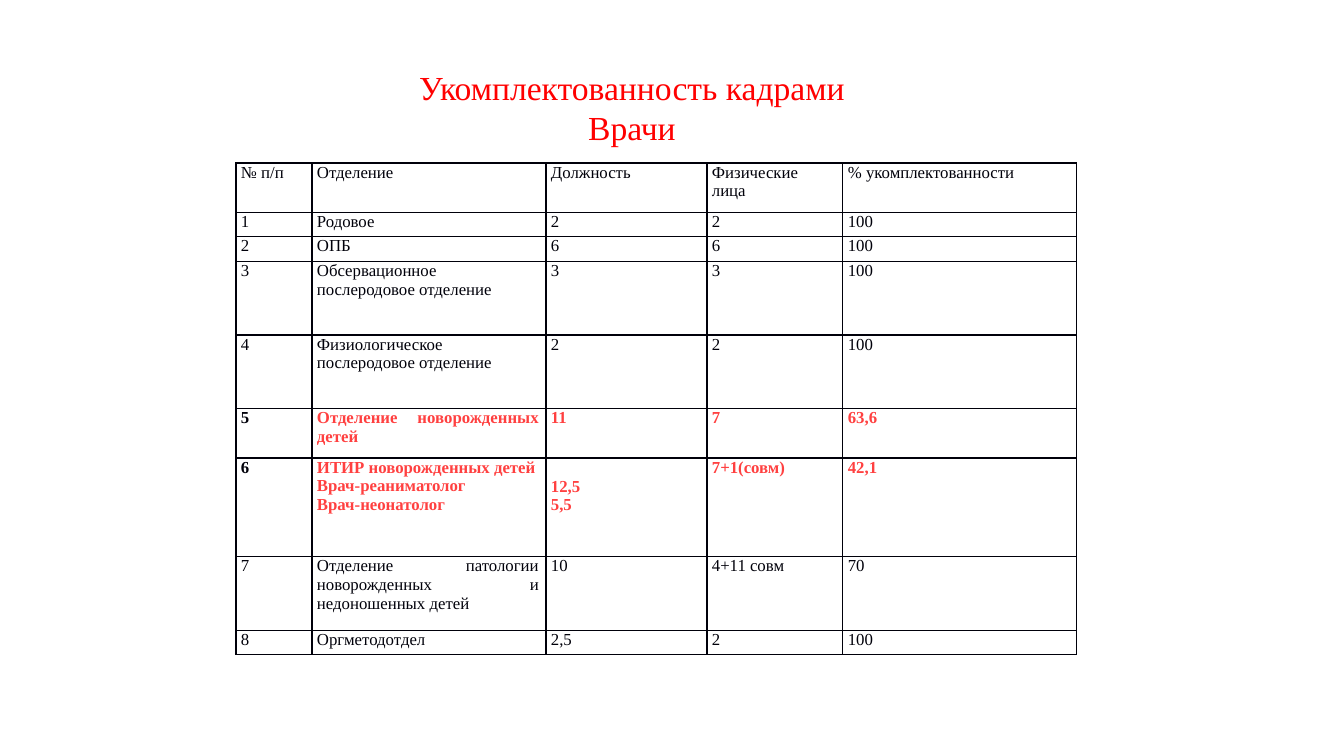
"""Build the staffing slide with a title and a table of departments."""
from lxml.etree import SubElement
from pptx import Presentation
from pptx.dml.color import RGBColor
from pptx.enum.text import MSO_ANCHOR, MSO_AUTO_SIZE, PP_ALIGN as Align
from pptx.oxml.ns import qn
from pptx.util import Pt

PX = 914400 / 100.8
FONT = "Times New Roman"
RED = RGBColor(0xFF, 0x00, 0x00)
CORAL = RGBColor(0xFF, 0x40, 0x40)
INK = RGBColor(0x00, 0x00, 0x0A)

TITLE = ["Укомплектованность кадрами", "Врачи"]
ROWS = [
    ["№ п/п", "Отделение", "Должность", "Физические лица", "% укомплектованности"],
    ["1", "Родовое", "2", "2", "100"],
    ["2", "ОПБ", "6", "6", "100"],
    ["3", "Обсервационное послеродовое отделение", "3", "3", "100"],
    ["4", "Физиологическое послеродовое отделение", "2", "2", "100"],
    ["5", "Отделение новорожденных детей", "11", "7", "63,6"],
    ["6", "ИТИР новорожденных детей\nВрач-реаниматолог\nВрач-неонатолог",
     "12,5\n5,5", "7+1(совм)", "42,1"],
    ["7", "Отделение патологии новорожденных и недоношенных детей",
     "10", "4+11 совм", "70"],
    ["8", "Оргметодотдел", "2,5", "2", "100"],
]
COL_WIDTHS = [76, 234, 161, 136, 234]
ROW_LINES = [2, 1, 1, 3, 3, 2, 4, 3, 1]
SHORT_STAFFED = (5, 6)
LEFT_ALIGNED = [(3, 1), (4, 1)]
SECOND_LINE_START = (6, 2)


def px(n):
    """Turn pixels into EMU."""
    return round(n * PX)


def write_lines(tf, lines, size, color, align, bold=False, spacing=None):
    """Fill a text frame with one formatted paragraph per line."""
    for i, line in enumerate(lines):
        p = tf.add_paragraph() if i else tf.paragraphs[0]
        p.alignment = align
        p.line_spacing = spacing
        r = p.add_run()
        r.text = line
        r.font.name, r.font.size, r.font.bold = FONT, Pt(size), bold
        r.font.color.rgb = color


def add_title(slide, x, y, w, h):
    """Place the two-line title in the title placeholder."""
    sp = slide.shapes.title
    sp.left, sp.top, sp.width, sp.height = px(x), px(y), px(w), px(h)
    tf = sp.text_frame
    tf.word_wrap = True
    tf.auto_size = MSO_AUTO_SIZE.NONE
    tf.vertical_anchor = MSO_ANCHOR.MIDDLE
    write_lines(tf, TITLE, 24, RED, Align.CENTER)


def add_borders(cell):
    """Draw a thin line on all four sides of a cell."""
    tc_pr = cell._tc.get_or_add_tcPr()
    for side in ("a:lnL", "a:lnR", "a:lnT", "a:lnB"):
        ln = SubElement(tc_pr, qn(side), w=str(Pt(1)))
        fill = SubElement(ln, qn("a:solidFill"))
        SubElement(fill, qn("a:srgbClr"), val=str(INK))


def fill_cell(cell, row, col):
    """Write and format one table cell."""
    short = row in SHORT_STAFFED
    cell.margin_left, cell.margin_right = px(5), px(7)
    cell.margin_top = px(19) if (row, col) == SECOND_LINE_START else 0
    cell.margin_bottom = 0
    add_borders(cell)
    cell.fill.background()
    align = Align.LEFT if (row, col) in LEFT_ALIGNED else Align.JUSTIFY
    write_lines(cell.text_frame, ROWS[row][col].split("\n"), 12,
                CORAL if short and col else INK, align, short, Pt(13.4))


def add_staff_table(slide, x, y, w, h):
    """Place the staffing table in the given box."""
    table = slide.shapes.add_table(len(ROWS), len(COL_WIDTHS),
                                   px(x), px(y), px(w), px(h)).table
    table.first_row = table.horz_banding = False
    for column, width in zip(table.columns, COL_WIDTHS):
        column.width = px(w * width / sum(COL_WIDTHS))
    for i, lines in enumerate(ROW_LINES):
        table.rows[i].height = px(h * lines / sum(ROW_LINES))
        for j in range(len(COL_WIDTHS)):
            fill_cell(table.cell(i, j), i, j)


def main():
    """Create and save the presentation."""
    prs = Presentation()
    prs.slide_width, prs.slide_height = px(1344), px(756)
    slide = prs.slides.add_slide(prs.slide_layouts[5])
    add_title(slide, 299, 61, 666, 92)
    add_staff_table(slide, 236, 163, 841, 492)
    prs.save("out.pptx")


if __name__ == "__main__":
    main()
